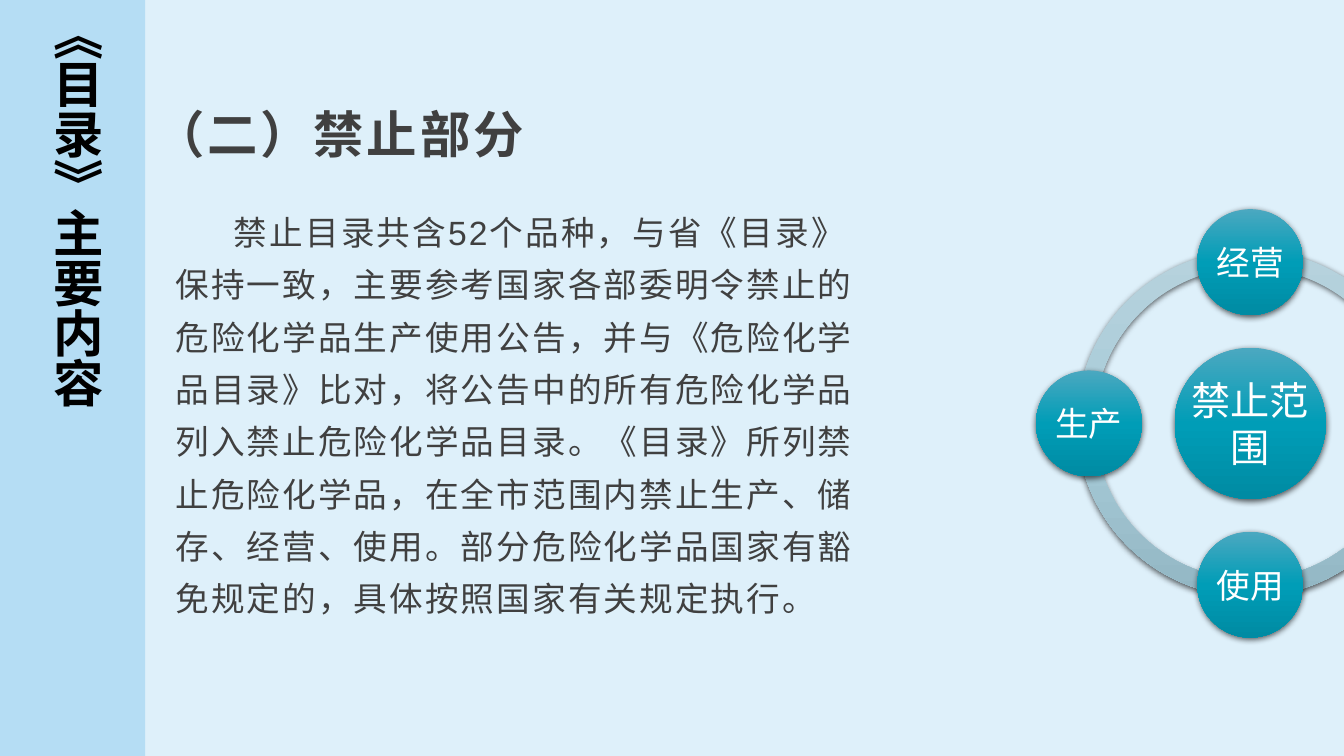
from copy import deepcopy

from lxml.etree import SubElement
from pptx import Presentation
from pptx.dml.color import RGBColor
from pptx.enum.lang import MSO_LANGUAGE_ID
from pptx.enum.shapes import MSO_SHAPE
from pptx.enum.text import MSO_ANCHOR, MSO_AUTO_SIZE, PP_ALIGN
from pptx.oxml.ns import qn
from pptx.util import Emu, Pt

EMU_PER_PX = 9144  # 100 px to the inch
SLIDE_WIDTH, SLIDE_HEIGHT = 1333, 750
STRIP_WIDTH = 144
DARK_GREY = "404040"
RING_COLORS = ("B6D2DD", "A9CCD9", "93B7C4")
CIRCLE_COLORS = ("4BA8C0", "009DB7", "008BA3")

BODY_TEXT = (
    "禁止目录共含52个品种，与省《目录》保持一致，主要参考国家各部委明令禁止的"
    "危险化学品生产使用公告，并与《危险化学品目录》比对，将公告中的所有危险化学品"
    "列入禁止危险化学品目录。《目录》所列禁止危险化学品，在全市范围内禁止生产、"
    "储存、经营、使用。部分危险化学品国家有豁免规定的，具体按照国家有关规定执行。"
)


def px(length):
    return Emu(round(length * EMU_PER_PX))


def color(hex_string):
    return RGBColor.from_string(hex_string)


def place(shape, box):
    shape.left, shape.top, shape.width, shape.height = map(px, box)


def write(shape, text, size, hex_color, bold=False, spacing=0, align=PP_ALIGN.LEFT,
          anchor=MSO_ANCHOR.MIDDLE, insets=(10, 5, 10, 5), line_spacing=1.0, space_after=0):
    """Fill a shape with one formatted paragraph and return that paragraph."""
    frame = shape.text_frame
    frame.word_wrap = True
    frame.auto_size = MSO_AUTO_SIZE.NONE
    frame.vertical_anchor = anchor
    (frame.margin_left, frame.margin_top,
     frame.margin_right, frame.margin_bottom) = map(px, insets)
    paragraph = frame.paragraphs[0]
    paragraph.alignment = align
    paragraph.line_spacing = line_spacing
    paragraph.space_before = Pt(0)
    paragraph.space_after = Pt(space_after)
    run = paragraph.add_run()
    run.text = text
    run.font.name = "Arial"
    run.font.size = Pt(size)
    run.font.bold = bold
    run.font.color.rgb = color(hex_color)
    run.font.language_id = MSO_LANGUAGE_ID.SIMPLIFIED_CHINESE
    run._r.get_or_add_rPr().set("spc", str(round(spacing * 100)))
    return paragraph


def add_plain_shape(shapes, kind, box):
    shape = shapes.add_shape(kind, *map(px, box))
    shape.shadow.inherit = False
    shape.line.fill.background()
    return shape


def add_glossy_shape(shapes, kind, box, hex_colors):
    """Add a shape with a three-stop vertical gradient and a soft shadow below."""
    shape = add_plain_shape(shapes, kind, box)
    shape.fill.gradient()
    shape.fill.gradient_angle = 270
    properties = shape._element.spPr
    stop_list = properties.find(qn("a:gradFill")).find(qn("a:gsLst"))
    stop_list.insert(1, deepcopy(stop_list[0]))
    for stop, position, hex_color in zip(shape.fill.gradient_stops, (0, 0.5, 1), hex_colors):
        stop.position = position
        stop.color.rgb = color(hex_color)
    shadow = SubElement(properties.find(qn("a:effectLst")), qn("a:outerShdw"),
                        blurRad=str(Pt(4.5)), dist=str(Pt(1.5)), dir="5400000",
                        algn="ctr", rotWithShape="0")
    shadow_color = SubElement(shadow, qn("a:srgbClr"), val="000000")
    SubElement(shadow_color, qn("a:alpha"), val="63000")
    return shape


def add_title(slide, box):
    place(slide.shapes.title, box)
    write(slide.shapes.title, "（二）禁止部分", 36, DARK_GREY, bold=True, spacing=2)


def add_body(slide, box):
    body = slide.placeholders[1]
    place(body, box)
    paragraph = write(body, BODY_TEXT, 24, DARK_GREY, spacing=1.5, anchor=MSO_ANCHOR.TOP,
                      line_spacing=1.3, space_after=10)
    properties = paragraph._p.get_or_add_pPr()
    properties.set("marL", "0")
    properties.set("indent", str(px(58)))
    SubElement(properties, qn("a:buNone"))


def add_side_strip(slide, box):
    strip = add_plain_shape(slide.shapes, MSO_SHAPE.RECTANGLE, box)
    strip.fill.solid()
    strip.fill.fore_color.rgb = color("B5DDF4")
    write(strip, "《目录》主要内容", 36, "000000", bold=True, spacing=-0.5, line_spacing=0.9)
    strip.text_frame._txBody.bodyPr.set("vert", "eaVert")


def add_circle(shapes, center_x, center_y, diameter, text, size, inset):
    box = (center_x - diameter / 2, center_y - diameter / 2, diameter, diameter)
    add_glossy_shape(shapes, MSO_SHAPE.OVAL, box, CIRCLE_COLORS)
    label = shapes.add_textbox(*map(px, box))
    write(label, text, size, "FFFFFF", align=PP_ALIGN.CENTER, insets=(inset,) * 4)


def add_scope_cycle(slide, box):
    """Draw the ring of four quarter arcs, the hub and the circles around it."""
    left, top, width, height = box
    center_x, center_y = left + width / 2, top + height / 2
    shapes = slide.shapes.add_group_shape().shapes
    quarter = 54  # a quarter turn in adjustment units
    for index in (3, 0, 1, 2):
        arc = add_glossy_shape(shapes, MSO_SHAPE.BLOCK_ARC, box, RING_COLORS)
        arc.adjustments[0] = index * quarter
        arc.adjustments[1] = (index + 1) % 4 * quarter
        arc.adjustments[2] = 0.05
    add_circle(shapes, center_x, center_y, 150, "禁止范围", 28, 4)
    distance = 160
    for text, step_x, step_y in (("经营", 0, -1), ("使用", 0, 1), ("生产", -1, 0)):
        add_circle(shapes, center_x + step_x * distance, center_y + step_y * distance,
                   105, text, 24, 3)


def main():
    presentation = Presentation()
    presentation.slide_width = px(SLIDE_WIDTH)
    presentation.slide_height = px(SLIDE_HEIGHT)
    slide = presentation.slides.add_slide(presentation.slide_layouts[1])
    slide.background.fill.solid()
    slide.background.fill.fore_color.rgb = color("DEF0FA")
    add_title(slide, (143, 84, 433, 96))
    add_body(slide, (164, 193, 712, 448))
    add_side_strip(slide, (0, 0, STRIP_WIDTH, SLIDE_HEIGHT))
    add_scope_cycle(slide, (1068, 248, 344, 344))
    presentation.save("out.pptx")


if __name__ == "__main__":
    main()
